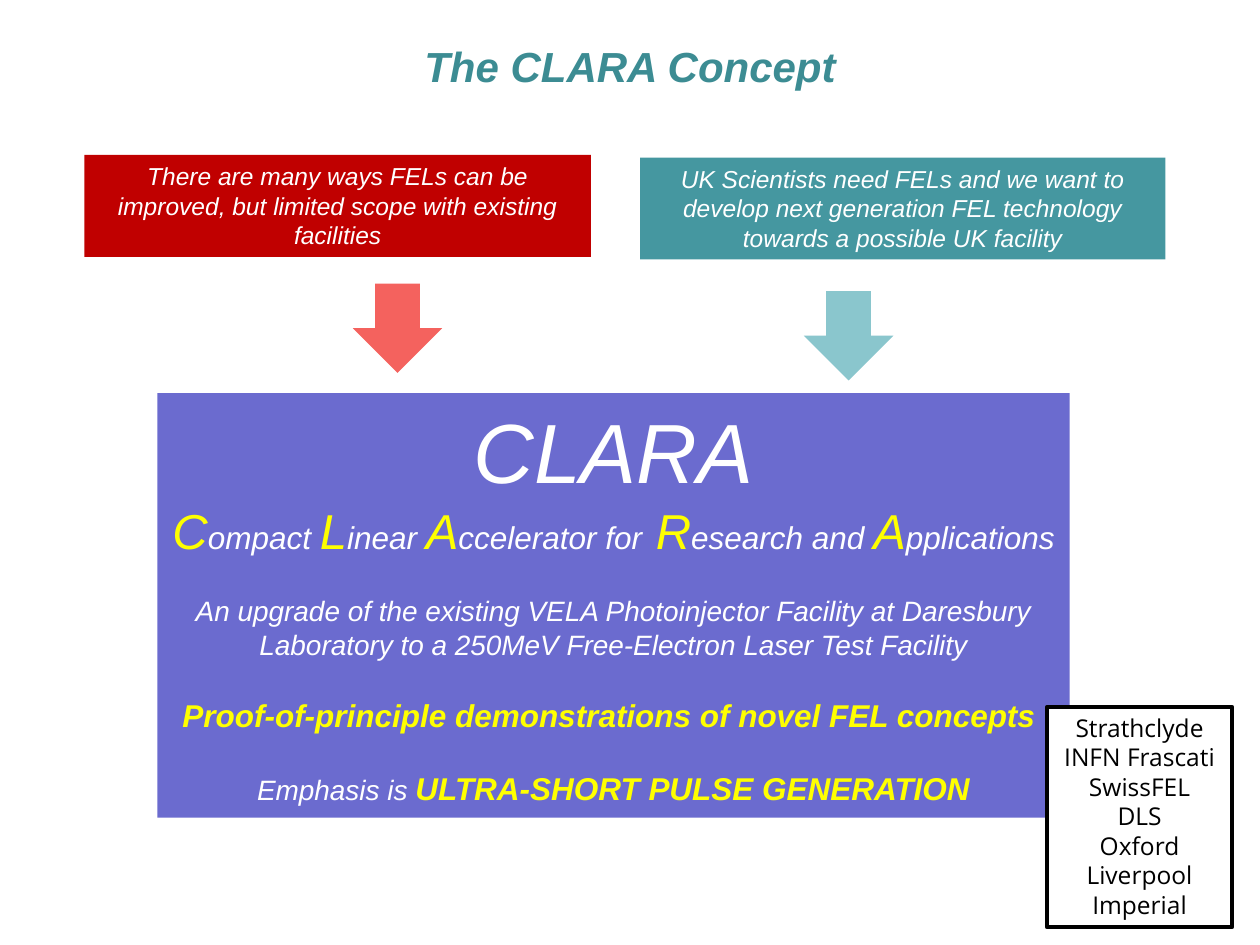
from pptx import Presentation
from pptx.dml.color import RGBColor
from pptx.enum.shapes import MSO_SHAPE as Shape
from pptx.enum.text import MSO_ANCHOR as Anchor, PP_ALIGN as Align
from pptx.util import Inches, Pt

TITLE_TEAL = RGBColor(0x3C, 0x8C, 0x93)
RED = RGBColor(0xC0, 0x00, 0x00)
TEAL = RGBColor(0x45, 0x97, 0xA0)
PURPLE = RGBColor(0x6B, 0x6B, 0xCF)
LIGHT_RED = RGBColor(0xF4, 0x62, 0x5E)
LIGHT_TEAL = RGBColor(0x8A, 0xC6, 0xCD)
YELLOW = RGBColor(0xFF, 0xFF, 0x00)
WHITE = RGBColor(0xFF, 0xFF, 0xFF)
BLACK = RGBColor(0x00, 0x00, 0x00)


def add_filled_shape(kind, left, top, width, height, fill):
    shape = slide.shapes.add_shape(
        kind, Inches(left), Inches(top), Inches(width), Inches(height))
    shape.shadow.inherit = False
    shape.fill.solid()
    shape.fill.fore_color.rgb = fill
    shape.line.fill.background()
    shape.text_frame.word_wrap = True
    shape.text_frame.vertical_anchor = Anchor.TOP
    return shape


def format_font(font, size, color, name="Arial", bold=False, italic=True):
    font.name = name
    font.size = Pt(size)
    font.color.rgb = color
    font.bold = bold
    font.italic = italic


presentation = Presentation()
presentation.slide_width = Inches(10)
presentation.slide_height = Inches(7.5)
slide = presentation.slides.add_slide(presentation.slide_layouts[5])

title = slide.shapes.title
title.left, title.top = Inches(0), Inches(0.13)
title.width, title.height = Inches(10), Inches(0.79)
title.text_frame.text = "The CLARA Concept"
title.text_frame.vertical_anchor = Anchor.MIDDLE
paragraph = title.text_frame.paragraphs[0]
paragraph.alignment = Align.CENTER
format_font(paragraph.font, 24, TITLE_TEAL, bold=True)

drivers = [
    (0.67, 1.23, 4.02, RED,
     "There are many ways FELs can be improved, but limited scope with existing facilities"),
    (5.08, 1.25, 4.17, TEAL,
     "UK Scientists need FELs and we want to develop next generation FEL technology "
     "towards a possible UK facility"),
]
for left, top, width, fill, text in drivers:
    driver = add_filled_shape(Shape.RECTANGLE, left, top, width, 0.81, fill)
    driver.text_frame.text = text
    paragraph = driver.text_frame.paragraphs[0]
    paragraph.alignment = Align.CENTER
    format_font(paragraph.font, 14, WHITE)

concept_lines = [
    (0, [("CLARA", 48, WHITE, False)]),
    (0, [
        ("C", 28, YELLOW, False), ("ompact ", 18, WHITE, False),
        ("L", 28, YELLOW, False), ("inear ", 18, WHITE, False),
        ("A", 28, YELLOW, False), ("ccelerator for", 18, WHITE, False),
        (" R", 28, YELLOW, False), ("esearch and ", 18, WHITE, False),
        ("A", 28, YELLOW, False), ("pplications", 18, WHITE, False),
    ]),
    (20, [("An upgrade of the existing VELA Photoinjector Facility at Daresbury "
           "Laboratory to a 250MeV Free-Electron Laser Test Facility", 16, WHITE, False)]),
    (20, [("Proof-of-principle demonstrations of novel FEL concepts ", 18, YELLOW, True)]),
    (20, [("Emphasis is ", 16, WHITE, False),
          ("ULTRA-SHORT PULSE GENERATION", 18, YELLOW, True)]),
]
concept = add_filled_shape(Shape.RECTANGLE, 1.25, 3.12, 7.24, 3.37, PURPLE)
for index, (space_before, runs) in enumerate(concept_lines):
    frame = concept.text_frame
    paragraph = frame.add_paragraph() if index else frame.paragraphs[0]
    paragraph.alignment = Align.CENTER
    paragraph.space_before = Pt(space_before)
    for text, size, color, bold in runs:
        run = paragraph.add_run()
        run.text = text
        format_font(run.font, size, color, bold=bold)

for left, top, fill in [(2.8, 2.25, LIGHT_RED), (6.38, 2.31, LIGHT_TEAL)]:
    add_filled_shape(Shape.DOWN_ARROW, left, top, 0.71, 0.71, fill)

partners = ["Strathclyde", "INFN Frascati", "SwissFEL", "DLS",
            "Oxford", "Liverpool", "Imperial"]
partner_box = add_filled_shape(Shape.RECTANGLE, 8.31, 5.61, 1.47, 1.75, WHITE)
partner_box.line.color.rgb = BLACK
partner_box.line.width = Pt(2.25)
partner_box.text_frame.text = "\n".join(partners)
for paragraph in partner_box.text_frame.paragraphs:
    paragraph.alignment = Align.CENTER
    format_font(paragraph.font, 14, BLACK, name="Open Sans", italic=False)

presentation.save("out.pptx")
